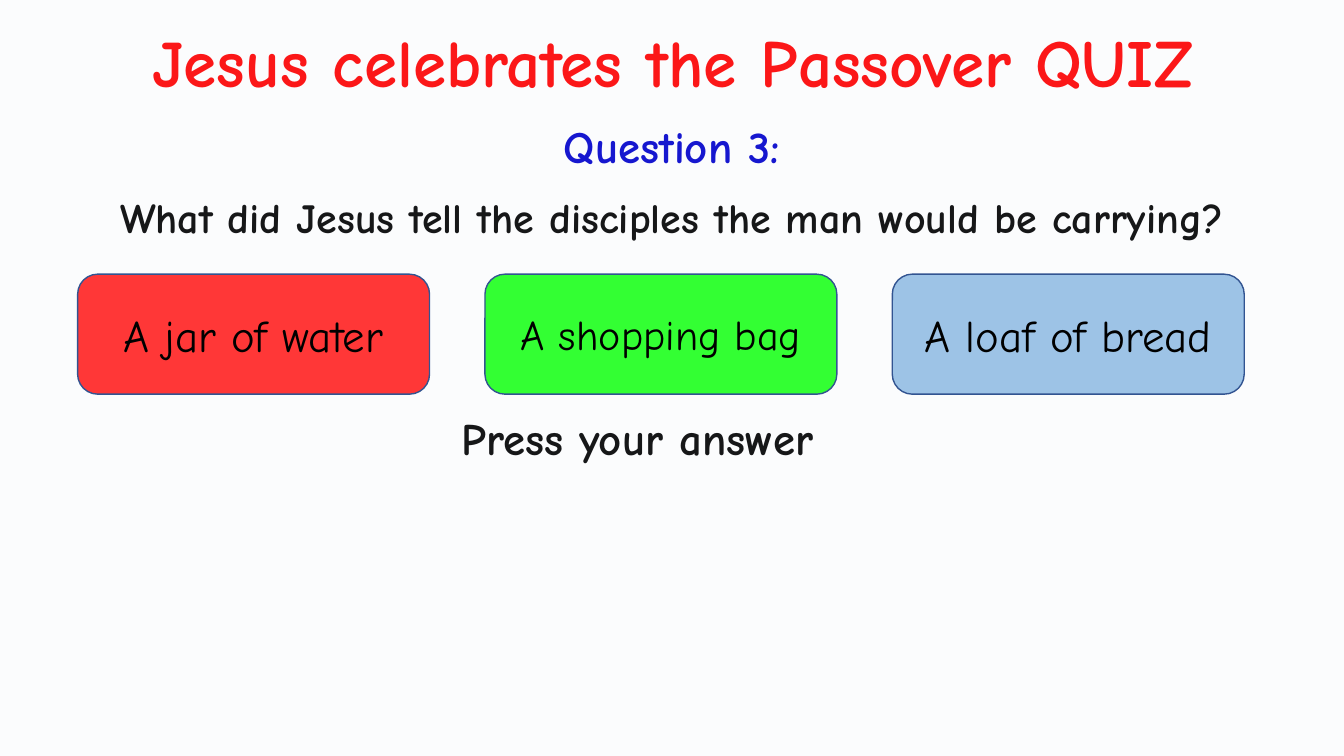
from lxml.etree import SubElement
from pptx import Presentation
from pptx.dml.color import RGBColor
from pptx.enum.shapes import MSO_SHAPE
from pptx.enum.text import MSO_ANCHOR, PP_ALIGN
from pptx.oxml.ns import qn
from pptx.util import Inches, Pt

SLIDE_WIDTH, SLIDE_HEIGHT = 13.33, 7.5


def color(value):
    return RGBColor.from_string(value)


class QuizSlide:
    """Holds the quiz style and the slide being drawn."""

    font_name = "Comic Neue"
    outline = "325491"

    def __init__(self, deck):
        self.slide = deck.slides.add_slide(deck.slide_layouts[6])
        self.slide.background.fill.solid()
        self.slide.background.fill.fore_color.rgb = color("FFFFFF")

    def set_text(self, shape, text, size, ink, bold, align):
        shape.text_frame.text = text
        para = shape.text_frame.paragraphs[0]
        para.alignment = align
        font = para.runs[0].font
        font.name = self.font_name
        font.size = Pt(size)
        font.bold = bold
        font.color.rgb = color(ink)
        return para

    def text(self, text, left, top, width, height, size, ink="000000",
             align=PP_ALIGN.CENTER, wrap=True, spacing=None, before=0):
        box = self.slide.shapes.add_textbox(
            Inches(left), Inches(top), Inches(width), Inches(height))
        box.text_frame.word_wrap = wrap
        para = self.set_text(box, text, size, ink, True, align)
        para.space_before = Pt(before)
        if spacing:
            para.line_spacing = spacing

    def block(self, kind, left, top, width, height, fill):
        shape = self.slide.shapes.add_shape(
            kind, Inches(left), Inches(top), Inches(width), Inches(height))
        shape.shadow.inherit = False
        shape.fill.solid()
        shape.fill.fore_color.rgb = color(fill)
        return shape

    def tint(self, fill, opacity):
        veil = self.block(MSO_SHAPE.RECTANGLE, 0, 0, SLIDE_WIDTH, SLIDE_HEIGHT, fill)
        veil.line.fill.background()
        tone = veil.element.spPr.find(qn("a:solidFill"))[0]
        SubElement(tone, qn("a:alpha")).set("val", str(opacity * 1000))

    def answer(self, text, left, fill, size):
        button = self.block(MSO_SHAPE.ROUNDED_RECTANGLE, left, 2.72, 3.49, 1.19, fill)
        button.line.color.rgb = color(self.outline)
        button.line.width = Pt(1)
        button.text_frame.word_wrap = True
        button.text_frame.vertical_anchor = MSO_ANCHOR.MIDDLE
        self.set_text(button, text, size, "000000", False, PP_ALIGN.CENTER)


def main():
    deck = Presentation()
    deck.slide_width = Inches(SLIDE_WIDTH)
    deck.slide_height = Inches(SLIDE_HEIGHT)
    quiz = QuizSlide(deck)

    quiz.text("Jesus celebrates the Passover QUIZ", 0.48, 0.15, 12.38, 0.91, 48,
              "FF0000", wrap=False)
    quiz.text("What did Jesus tell the disciples the man would be carrying?",
              0.23, 1.93, 12.87, 0.72, 30, spacing=Pt(30), before=10)
    quiz.text("Press your answer", 4.48, 4.09, 6.73, 0.72, 32,
              align=PP_ALIGN.LEFT, spacing=0.9, before=7.5)
    quiz.text("Question 3:", 4.46, 1.13, 4.41, 0.64, 32, "0000CC")
    quiz.tint("DAE3F3", 10)

    answers = [
        ("A jar of water", "FF3737", 32),
        ("A shopping bag", "33FF33", 30),
        ("A loaf of bread", "9DC3E6", 32),
    ]
    for index, (text, fill, size) in enumerate(answers):
        quiz.answer(text, 0.77 + 4.04 * index, fill, size)

    deck.save("out.pptx")


if __name__ == "__main__":
    main()
